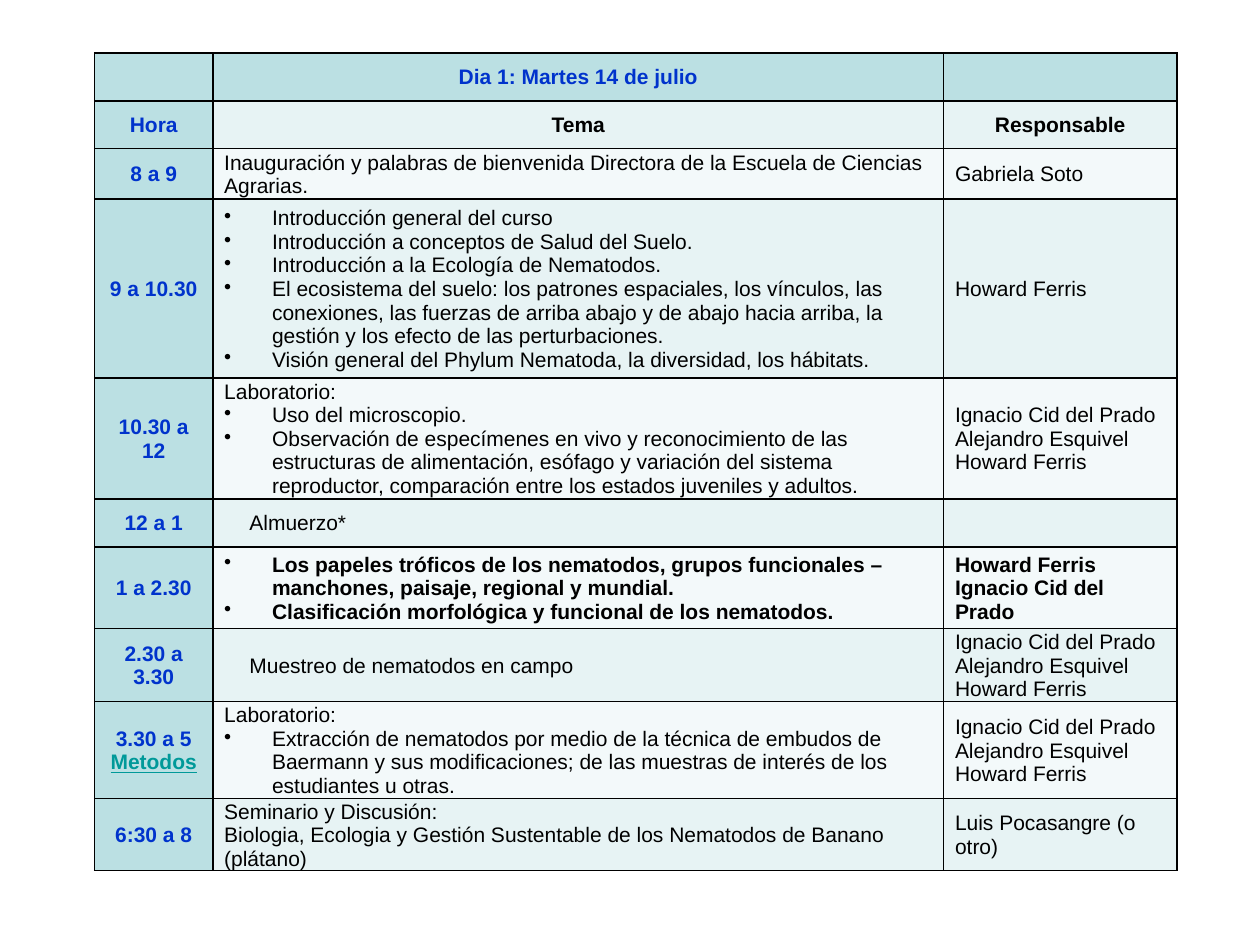
from dataclasses import dataclass
from lxml.etree import SubElement
from pptx import Presentation as Deck
from pptx.dml.color import RGBColor as Rgb
from pptx.enum.text import MSO_VERTICAL_ANCHOR as Anchor, PP_PARAGRAPH_ALIGNMENT as Align
from pptx.oxml.ns import qn
from pptx.util import Inches, Pt


@dataclass(frozen=True)
class Theme:
    """Colours, type and line sizes of the timetable."""
    accent: str = "BBE0E3"
    odd: str = "E7F3F4"
    even: str = "F3F9FA"
    blue: str = "0033CC"
    link: str = "009999"
    ink: str = "000000"
    font: str = "Arial"
    size: int = 12
    border: int = 1


@dataclass(frozen=True)
class Line:
    """One paragraph of a cell with its form."""
    text: str
    form: str = "plain"


@dataclass(frozen=True)
class Session:
    """One row of the timetable."""
    units: int
    hour: tuple = ()
    topics: tuple = ()
    people: tuple = ()
    bold: bool = False
    centred: bool = False


THEME = Theme()
UNIT = Inches(10) // 1000
COLUMNS = (94, 580, 185)
TABLE_LEFT, TABLE_TOP = 75, 42
INDENTS = {"bullet": (38, -38), "inset": (20, 0)}
TEAM = ("Ignacio Cid del Prado", "Alejandro Esquivel", "Howard Ferris")


def lines(form, *texts):
    """Return paragraphs that share one form."""
    return tuple(Line(text, form) for text in texts)


SESSIONS = (
    Session(38, topics=lines("plain", "Dia 1: Martes 14 de julio"), bold=True, centred=True),
    Session(38, lines("plain", "Hora"), lines("plain", "Tema"), ("Responsable",),
            bold=True, centred=True),
    Session(40, lines("plain", "8 a 9"),
            lines("plain", "Inauguración y palabras de bienvenida Directora de la "
                  "Escuela de Ciencias Agrarias."),
            ("Gabriela Soto",)),
    Session(142, lines("plain", "9 a 10.30"),
            lines("bullet", "Introducción general del curso",
                  "Introducción a conceptos de Salud del Suelo.",
                  "Introducción a la Ecología de Nematodos.",
                  "El ecosistema del suelo: los patrones espaciales, los vínculos, las "
                  "conexiones, las fuerzas de arriba abajo y de abajo hacia arriba, la "
                  "gestión y los efecto de las perturbaciones.",
                  "Visión general del Phylum Nematoda, la diversidad, los hábitats."),
            ("Howard Ferris",)),
    Session(96, lines("plain", "10.30 a 12"),
            lines("plain", "Laboratorio:")
            + lines("bullet", "Uso del microscopio.",
                    "Observación de especímenes en vivo y reconocimiento de las "
                    "estructuras de alimentación, esófago y variación del sistema "
                    "reproductor, comparación entre los estados juveniles y adultos."),
            TEAM),
    Session(38, lines("plain", "12 a 1"), lines("inset", "Almuerzo*")),
    Session(65, lines("plain", "1 a 2.30"),
            lines("bullet", "Los papeles tróficos de los nematodos, grupos funcionales "
                  "–manchones, paisaje, regional y mundial.",
                  "Clasificación morfológica y funcional de los nematodos."),
            ("Howard Ferris", "Ignacio Cid del Prado"), bold=True),
    Session(58, lines("plain", "2.30 a 3.30"),
            lines("inset", "Muestreo de nematodos en campo"), TEAM),
    Session(77, lines("plain", "3.30 a 5") + lines("link", "Metodos"),
            lines("plain", "Laboratorio:")
            + lines("bullet", "Extracción de nematodos por medio de la técnica de embudos "
                    "de Baermann y sus modificaciones; de las muestras de interés de los "
                    "estudiantes u otras."),
            TEAM),
    Session(39, lines("plain", "6:30 a 8"),
            lines("plain", "Seminario y Discusión:",
                  "Biologia, Ecologia y Gestión Sustentable de los Nematodos de Banano "
                  "(plátano)"),
            ("Luis Pocasangre (o otro)",)),
)


def assign(target, values):
    """Set each named attribute of the target."""
    for name, value in values.items():
        setattr(target, name, value)


def draw_borders(cell):
    """Rule all four sides of a cell."""
    properties = cell._tc.get_or_add_tcPr()
    for side in ("lnL", "lnR", "lnT", "lnB"):
        edge = SubElement(properties, qn(f"a:{side}"), w=str(Pt(THEME.border)))
        paint = SubElement(edge, qn("a:solidFill"))
        SubElement(paint, qn("a:srgbClr"), val=THEME.ink)


def indent(para, form):
    """Indent a paragraph and give it a bullet where its form asks for one."""
    margin, hanging = INDENTS[form]
    properties = para._p.get_or_add_pPr()
    properties.set("marL", str(margin * UNIT))
    properties.set("indent", str(hanging * UNIT))
    if form == "bullet":
        SubElement(properties, qn("a:buChar"), char="•")


def write_line(para, line, color, bold, align):
    """Write one paragraph in its form."""
    if line.form in INDENTS:
        indent(para, line.form)
    is_link = line.form == "link"
    para.alignment = align
    assign(para.font, {"name": THEME.font, "size": Pt(THEME.size)})
    if line.text:
        span = para.add_run()
        span.text = line.text
        assign(span.font, {"name": THEME.font, "size": Pt(THEME.size),
                           "bold": bold, "underline": is_link})
        span.font.color.rgb = Rgb.from_string(THEME.link if is_link else color)


def fill_cell(cell, content, fill, color, bold, align):
    """Rule, colour and write one cell."""
    draw_borders(cell)
    cell.fill.solid()
    cell.fill.fore_color.rgb = Rgb.from_string(fill)
    assign(cell, {"vertical_anchor": Anchor.MIDDLE, "margin_left": Inches(0.09),
                  "margin_right": Inches(0.09), "margin_top": Inches(0.01),
                  "margin_bottom": 0})
    frame = cell.text_frame
    for index, line in enumerate(content or lines("plain", "")):
        para = frame.add_paragraph() if index else frame.paragraphs[0]
        write_line(para, line, color, bold, align)


def fill_row(table, index, session):
    """Fill the hour, topic and people cells of one session."""
    table.rows[index].height = session.units * UNIT
    contents = (session.hour, session.topics, lines("plain", *session.people))
    band = THEME.odd if index % 2 else THEME.even
    for column, content in enumerate(contents):
        is_hour = column == 0
        is_accent = is_hour or index == 0
        fill_cell(table.cell(index, column), content,
                  fill=THEME.accent if is_accent else band,
                  color=THEME.blue if is_accent else THEME.ink,
                  bold=is_hour or session.bold,
                  align=Align.CENTER if is_hour or session.centred else Align.LEFT)


def add_timetable(slide):
    """Add the day's timetable to the slide."""
    height = sum(session.units for session in SESSIONS)
    box = slide.shapes.add_table(len(SESSIONS), len(COLUMNS), TABLE_LEFT * UNIT,
                                 TABLE_TOP * UNIT, sum(COLUMNS) * UNIT, height * UNIT)
    table = box.table
    assign(table, {"first_row": False, "horz_banding": False})
    for column, units in zip(table.columns, COLUMNS):
        column.width = units * UNIT
    for index, session in enumerate(SESSIONS):
        fill_row(table, index, session)


def main():
    """Build and save the deck."""
    deck = Deck()
    assign(deck, {"slide_width": Inches(10), "slide_height": Inches(7.5)})
    add_timetable(deck.slides.add_slide(deck.slide_layouts[6]))
    deck.save("out.pptx")


if __name__ == "__main__":
    main()
